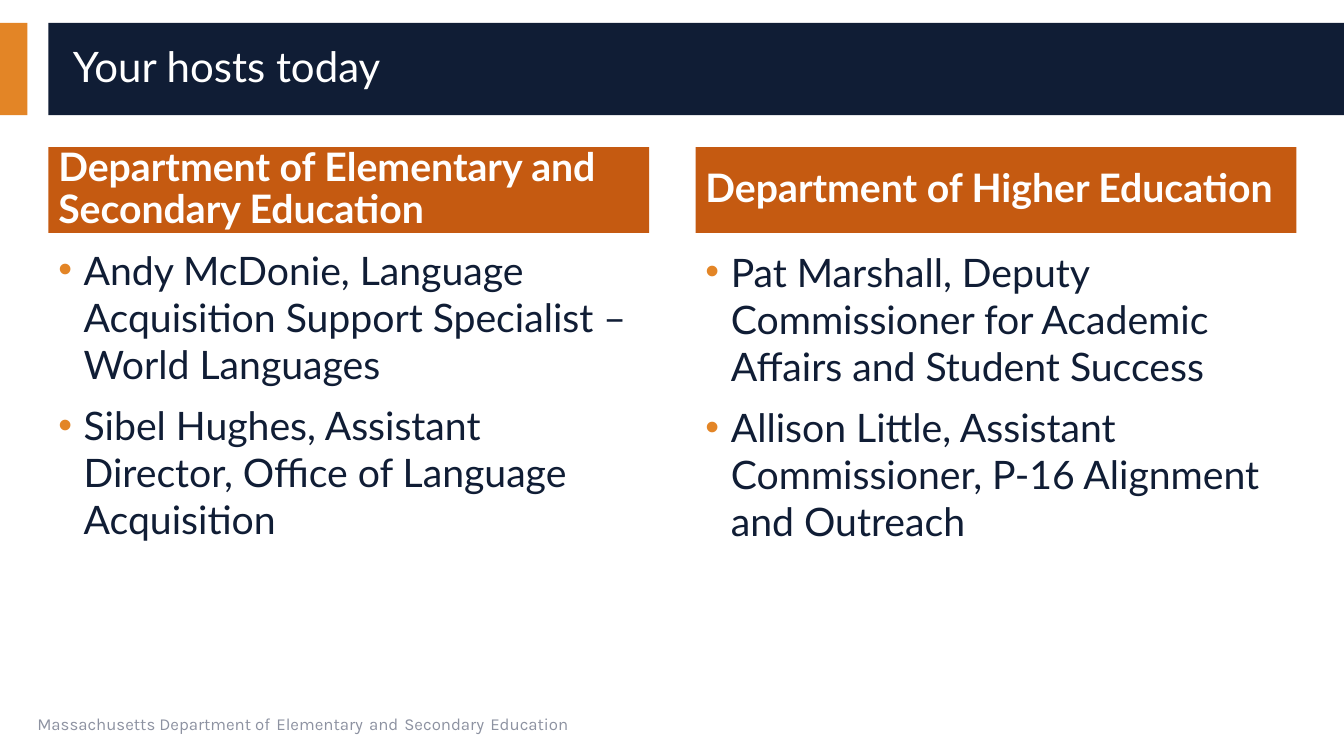
from lxml import etree
from pptx import Presentation
from pptx.dml.color import RGBColor
from pptx.enum.shapes import MSO_SHAPE as SHAPE
from pptx.enum.text import MSO_ANCHOR as ANCHOR, MSO_AUTO_SIZE as AUTO, PP_ALIGN as ALIGN
from pptx.oxml.ns import qn
from pptx.util import Cm, Pt

NAVY = RGBColor(0x10, 0x1D, 0x35)
ORANGE = RGBColor(0xE3, 0x85, 0x26)
RUST = RGBColor(0xC5, 0x5A, 0x11)
GREY = RGBColor(0x8D, 0x92, 0xA1)
WHITE = RGBColor(0xFF, 0xFF, 0xFF)

SLIDE_W, SLIDE_H = 33.87, 19.05
MARGIN = 1.22
COLUMN_W, COLUMN_STEP = 15.14, 16.31
INDENT = Cm(0.64)

# heading, top of the list, people
HOSTS = [
    ("Department of Elementary and Secondary Education", 6.07, [
        "Andy McDonie, Language Acquisition Support Specialist – World Languages",
        "Sibel Hughes, Assistant Director, Office of Language Acquisition"]),
    ("Department of Higher Education", 6.12, [
        "Pat Marshall, Deputy Commissioner for Academic Affairs and Student Success",
        "Allison Little, Assistant Commissioner, P-16 Alignment and Outreach"]),
]


def add_text(p, text, size=28, color=NAVY, font="Lato", bold=False, line_spacing=None):
    p.alignment = ALIGN.LEFT
    if line_spacing:
        p.line_spacing = line_spacing
    r = p.add_run()
    r.text = text
    r.font.size, r.font.name, r.font.bold = Pt(size), font, bold
    r.font.color.rgb = color


def add_bullet(p):
    """Give the paragraph an orange dot and a hanging indent."""
    pPr = p._p.get_or_add_pPr()
    pPr.set("marL", str(INDENT))
    pPr.set("indent", str(-INDENT))
    color = etree.SubElement(pPr, qn("a:buClr"))
    etree.SubElement(color, qn("a:srgbClr"), val=str(ORANGE))
    etree.SubElement(pPr, qn("a:buFont"), typeface="Arial")
    etree.SubElement(pPr, qn("a:buChar"), char="•")


def add_block(s, x, y, w, h, color):
    sp = s.shapes.add_shape(SHAPE.RECTANGLE, Cm(x), Cm(y), Cm(w), Cm(h))
    sp.shadow.inherit = False
    sp.fill.solid()
    sp.fill.fore_color.rgb = color
    sp.line.fill.background()
    return sp


def add_box(s, x, y, w, h):
    tf = s.shapes.add_textbox(Cm(x), Cm(y), Cm(w), Cm(h)).text_frame
    tf.word_wrap = True
    return tf


def add_title_bar(s, text, x, y, w, h):
    add_block(s, 0, y, 0.69, h, ORANGE)
    add_block(s, x, y, w, h, NAVY)
    title = s.shapes.title
    s.shapes.element.append(title.element)  # bring in front of the bar
    title.left, title.top = Cm(x + 0.36), Cm(y + 0.22)
    title.width, title.height = Cm(w - 0.91), Cm(h - 0.44)
    tf = title.text_frame
    tf.auto_size, tf.vertical_anchor = AUTO.NONE, ANCHOR.MIDDLE
    add_text(tf.paragraphs[0], text, size=30, color=WHITE, line_spacing=0.9)


def add_column(s, heading, people, x, y, w, list_top):
    tf = add_block(s, x, y, w, 2.16, RUST).text_frame
    tf.word_wrap, tf.vertical_anchor = True, ANCHOR.MIDDLE
    add_text(tf.paragraphs[0], heading, color=WHITE, bold=True, line_spacing=0.9)
    tf = add_box(s, x, list_top, w, 10.54)
    for i, person in enumerate(people):
        p = tf.add_paragraph() if i else tf.paragraphs[0]
        add_bullet(p)
        p.space_before = Pt(10 if i else 0)
        add_text(p, person)


def add_footer(s, x, y, w, h):
    """Small words set apart by larger spaces."""
    p = add_box(s, x, y, w, h).paragraphs[0]
    for i, words in enumerate(["Massachusetts Department of", "Elementary", "and",
                               "Secondary", "Education"]):
        if i:
            add_text(p, " ", size=18, color=GREY, font="Karla")
        add_text(p, words, size=12, color=GREY, font="Karla")


def main():
    prs = Presentation()
    prs.slide_width, prs.slide_height = Cm(SLIDE_W), Cm(SLIDE_H)
    s = prs.slides.add_slide(prs.slide_layouts[5])
    add_title_bar(s, "Your hosts today", MARGIN, 0.58, SLIDE_W - MARGIN, 2.32)
    for i, (heading, list_top, people) in enumerate(HOSTS):
        add_column(s, heading, people, MARGIN + i * COLUMN_STEP, 3.71, COLUMN_W, list_top)
    add_footer(s, 0.69, 17.65, 21.44, 1.02)
    prs.save("out.pptx")


if __name__ == "__main__":
    main()
